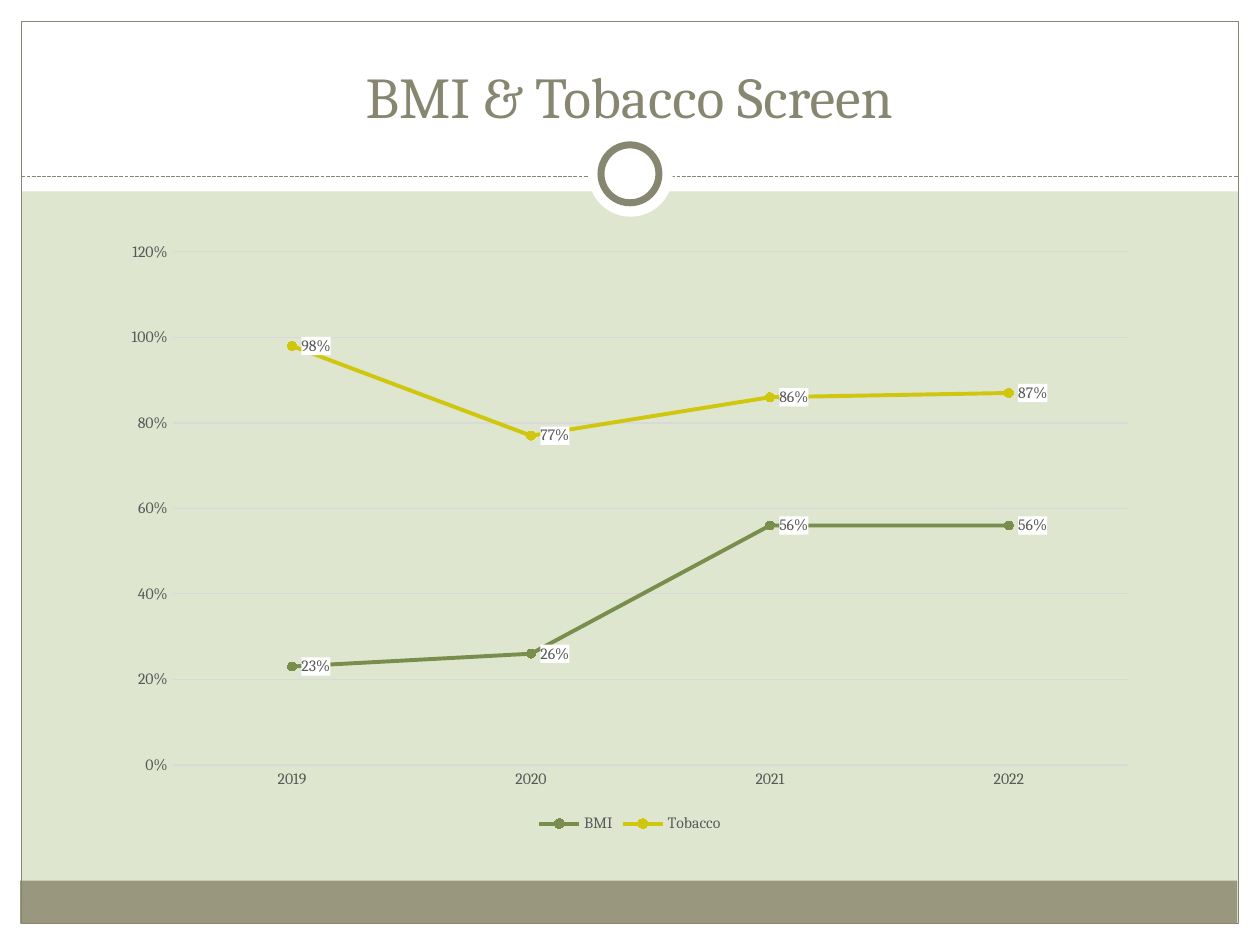
from dataclasses import dataclass
from typing import Optional

from lxml.etree import SubElement
from pptx import Presentation
from pptx.chart.data import CategoryChartData
from pptx.dml.color import RGBColor
from pptx.enum.chart import XL_CHART_TYPE as ChartType, XL_LABEL_POSITION as LabelPos
from pptx.enum.chart import XL_LEGEND_POSITION as LegendPos, XL_MARKER_STYLE as Marker
from pptx.enum.chart import XL_TICK_MARK as Tick
from pptx.enum.dml import MSO_LINE_DASH_STYLE as Dash
from pptx.enum.shapes import MSO_CONNECTOR as Connector, MSO_SHAPE as Shape
from pptx.enum.text import MSO_ANCHOR as Anchor, PP_ALIGN as Align
from pptx.oxml import parse_xml
from pptx.oxml.ns import nsdecls, qn
from pptx.util import Inches, Pt

FONT = "Cambria"
COLORS = {
    "background": "DFE6D0",
    "white": "FFFFFF",
    "footer": "99987F",
    "accent": "878670",
    "text": "595959",
    "grid": "D9D9D9",
    "BMI": "798E4C",
    "Tobacco": "CFC60D",
}
YEARS = ["2019", "2020", "2021", "2022"]
SCREENED = {
    "BMI": [0.23, 0.26, 0.56, 0.56],
    "Tobacco": [0.98, 0.77, 0.86, 0.87],
}


@dataclass
class Panel:
    left: float
    top: float
    width: float
    height: float
    fill: Optional[str] = None
    line_width: float = 0
    kind: Shape = Shape.RECTANGLE


BORDERS = [
    Panel(0, 7.33, 10, 0.17, "white"),
    Panel(0, 0, 10, 1.52, "white"),
    Panel(0, 0, 0.17, 7.5, "white"),
    Panel(9.83, 0, 0.17, 7.5, "white"),
    Panel(0.16, 6.99, 9.66, 0.34, "footer"),
    Panel(0.17, 0.17, 9.66, 7.16, line_width=0.75),
]
RINGS = [
    Panel(4.67, 1.05, 0.67, 0.67, "white", kind=Shape.OVAL),
    Panel(4.77, 1.15, 0.46, 0.46, "white", 4, Shape.OVAL),
]


def rgb(name: str) -> RGBColor:
    return RGBColor.from_string(COLORS[name])


def style_line(line, color: str, width: float) -> None:
    line.color.rgb = rgb(color)
    line.width = Pt(width)


def style_font(font, size: float, color: str) -> None:
    for key, value in {"name": FONT, "size": Pt(size), "bold": False}.items():
        setattr(font, key, value)
    font.color.rgb = rgb(color)


def add_panel(s, panel: Panel) -> None:
    box = map(Inches, (panel.left, panel.top, panel.width, panel.height))
    sp = s.shapes.add_shape(panel.kind, *box)
    sp.shadow.inherit = False
    if panel.fill:
        sp.fill.solid()
        sp.fill.fore_color.rgb = rgb(panel.fill)
    else:
        sp.fill.background()
    if panel.line_width:
        style_line(sp.line, "accent", panel.line_width)
    else:
        sp.line.fill.background()


def add_divider(s) -> None:
    y = Inches(1.4)
    line = s.shapes.add_connector(Connector.STRAIGHT, Inches(0.17), y, Inches(9.83), y)
    style_line(line.line, "accent", 0.75)
    line.line.dash_style = Dash.SQUARE_DOT
    SubElement(line._element.spPr, qn("a:effectLst"))


def add_title(s, text: str) -> None:
    sp = s.shapes.add_textbox(Inches(0.33), Inches(0.25), Inches(9.33), Inches(0.83))
    tf = sp.text_frame
    tf.word_wrap = True
    tf.vertical_anchor = Anchor.BOTTOM
    p = tf.paragraphs[0]
    p.alignment = Align.CENTER
    r = p.add_run()
    r.text = text
    style_font(r.font, 33, "accent")


def style_axes(chart) -> None:
    for axis in (chart.category_axis, chart.value_axis):
        axis.major_tick_mark = axis.minor_tick_mark = Tick.NONE
        style_font(axis.tick_labels.font, 9, "text")
    style_line(chart.category_axis.format.line, "grid", 0.75)
    axis = chart.value_axis
    scale = {"minimum_scale": 0, "maximum_scale": 1.2, "major_unit": 0.2}
    for key, value in scale.items():
        setattr(axis, key, value)
    axis.tick_labels.number_format = "0%"
    axis.tick_labels.number_format_is_linked = False
    axis.format.line.fill.background()
    style_line(axis.major_gridlines.format.line, "grid", 0.75)


def style_series(series) -> None:
    """Colour the line and markers and put values on white labels."""
    series.smooth = False
    style_line(series.format.line, series.name, 2.25)
    marker = series.marker
    marker.style, marker.size = Marker.CIRCLE, 5
    marker.format.fill.solid()
    marker.format.fill.fore_color.rgb = rgb(series.name)
    style_line(marker.format.line, series.name, 0.75)
    labels = series.data_labels
    settings = {
        "show_value": True,
        "number_format": "0%",
        "number_format_is_linked": False,
        "position": LabelPos.RIGHT,
    }
    for key, value in settings.items():
        setattr(labels, key, value)
    style_font(labels.font, 9, "text")
    label_fill = parse_xml(
        f'<c:spPr {nsdecls("c", "a")}><a:solidFill>'
        f'<a:srgbClr val="{COLORS["white"]}"/></a:solidFill></c:spPr>'
    )
    labels._element.find(qn("c:txPr")).addprevious(label_fill)


def add_screen_chart(s) -> None:
    data = CategoryChartData(number_format="0%")
    data.categories = YEARS
    for name, values in SCREENED.items():
        data.add_series(name, values)
    box = map(Inches, (0.88, 1.83, 8.24, 4.82))
    chart = s.shapes.add_chart(ChartType.LINE_MARKERS, *box, data).chart
    style_font(chart.font, 10, "text")
    chart.has_title = False
    chart.has_legend = True
    chart.legend.position = LegendPos.BOTTOM
    chart.legend.include_in_layout = False
    style_font(chart.legend.font, 9, "text")
    style_axes(chart)
    chart.plots[0].vary_by_categories = False
    for series in chart.plots[0].series:
        style_series(series)


def main() -> None:
    prs = Presentation()
    prs.slide_width, prs.slide_height = Inches(10), Inches(7.5)
    s = prs.slides.add_slide(prs.slide_layouts[6])
    s.background.fill.solid()
    s.background.fill.fore_color.rgb = rgb("background")
    for panel in BORDERS:
        add_panel(s, panel)
    add_divider(s)
    for ring in RINGS:
        add_panel(s, ring)
    add_title(s, "BMI & Tobacco Screen")
    add_screen_chart(s)
    prs.save("out.pptx")


if __name__ == "__main__":
    main()
